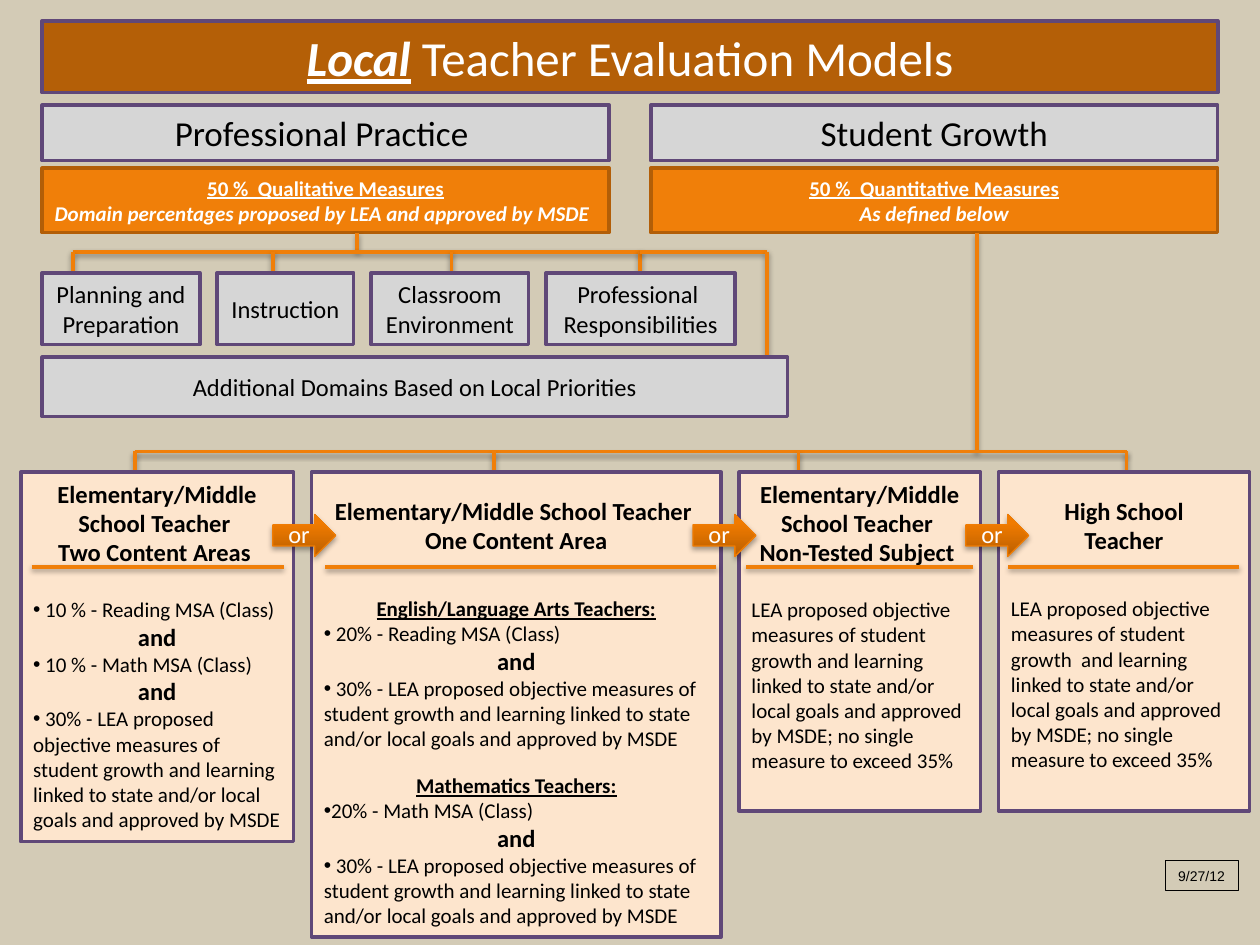
from lxml import etree
from pptx import Presentation
from pptx.dml.color import RGBColor
from pptx.enum.shapes import MSO_CONNECTOR, MSO_SHAPE
from pptx.enum.text import MSO_ANCHOR, MSO_AUTO_SIZE, PP_ALIGN
from pptx.oxml import parse_xml
from pptx.oxml.ns import qn
from pptx.util import Cm, Pt

DRAWING_NS = 'xmlns:a="http://schemas.openxmlformats.org/drawingml/2006/main"'
PURPLE, ORANGE, GREY, PEACH = "604878", "F07F09", "D6D6D6", "FDE5CD"
MARGIN, HALF_WIDTH = 0.85, 11.43
OBJECTIVES = ("LEA proposed objective measures of student growth and learning "
              "linked to state and/or local goals and approved by MSDE")


def color(hex_string):
    return RGBColor.from_string(hex_string)


def add_text(frame, text, size=14, ink="000000", bold=False, italic=False,
             underline=False, align=PP_ALIGN.CENTER, font="Calibri", before=0,
             bullet=False, same_line=False):
    paragraph = frame.paragraphs[-1]
    if paragraph.runs and not same_line:
        paragraph = frame.add_paragraph()
    paragraph.alignment = align
    paragraph.space_before = Pt(before)
    if bullet:
        properties = paragraph._p.get_or_add_pPr()
        properties.set("marL", "0")
        properties.set("indent", "0")
        etree.SubElement(properties, qn("a:buFont")).set("typeface", "Arial")
        etree.SubElement(properties, qn("a:buChar")).set("char", "•")
    run = paragraph.add_run()
    run.text = text
    run.font.name, run.font.size = font, Pt(size)
    run.font.bold, run.font.italic, run.font.underline = bold, italic, underline
    run.font.color.rgb = color(ink)


def style_box(shape, fill, line, width=2):
    if fill:
        shape.fill.solid()
        shape.fill.fore_color.rgb = color(fill)
    else:
        shape.fill.background()
    shape.line.color.rgb = color(line)
    shape.line.width = Pt(width)
    frame = shape.text_frame
    frame.word_wrap = True
    frame.auto_size = MSO_AUTO_SIZE.NONE
    frame.vertical_anchor = MSO_ANCHOR.MIDDLE
    frame.margin_left = frame.margin_right = Cm(0.25)
    frame.margin_top = frame.margin_bottom = Cm(0.13)
    return frame


def add_box(slide, left, top, width, height, fill=GREY, line=PURPLE, line_width=2):
    """Add a rectangle and return its text frame."""
    shape = slide.shapes.add_shape(MSO_SHAPE.RECTANGLE, Cm(left), Cm(top),
                                   Cm(width), Cm(height))
    shape.shadow.inherit = False
    return style_box(shape, fill, line, line_width)


def add_shadow(shape, blur, distance, alpha):
    """Give blur and distance in points and alpha in percent."""
    shape._element.spPr.append(parse_xml(
        f'<a:effectLst {DRAWING_NS}><a:outerShdw blurRad="{Pt(blur)}" '
        f'dist="{Pt(distance)}" dir="5400000" rotWithShape="0">'
        f'<a:srgbClr val="000000"><a:alpha val="{alpha * 1000}"/></a:srgbClr>'
        '</a:outerShdw></a:effectLst>'))


def add_line(slide, x1, y1, x2, y2):
    connector = slide.shapes.add_connector(MSO_CONNECTOR.STRAIGHT, Cm(x1), Cm(y1),
                                           Cm(x2), Cm(y2))
    connector.line.color.rgb = color(ORANGE)
    connector.line.width = Pt(2)
    add_shadow(connector, 3.1, 1.6, 38)


def add_branches(slide, trunk, trunk_top, bus, bottom, branches):
    """Connect a trunk to a horizontal bus with branches down to the boxes."""
    add_line(slide, trunk, trunk_top, trunk, bus)
    add_line(slide, branches[0], bus, branches[-1], bus)
    for branch in branches:
        add_line(slide, branch, bus, branch, bottom)


def add_title(slide, left, top, width, height):
    title = slide.shapes.title
    title.left, title.top = Cm(left), Cm(top)
    title.width, title.height = Cm(width), Cm(height)
    frame = style_box(title, "B45F07", PURPLE)
    add_text(frame, "Local", 28, "FFFFFF", bold=True, italic=True, underline=True)
    add_text(frame, " Teacher Evaluation Models", 28, "FFFFFF", same_line=True)


def add_component(slide, left, top, width, heading, share, basis, basis_align):
    """Add one half of the evaluation: its heading above its share."""
    add_text(add_box(slide, left, top, width, 1.12), heading, 20)
    frame = add_box(slide, left, top + 1.27, width, 1.3, ORANGE, "B25E07")
    add_text(frame, share, 12, "FFFFFF", bold=True, underline=True)
    add_text(frame, basis, 12, "FFFFFF", bold=True, italic=True, align=basis_align)


def add_domains(slide, left, top):
    add_branches(slide, 7.2, top - 0.81, top - 0.42, top, [1.47, 5.5, 9.1, 12.9])
    add_line(slide, 12.9, top - 0.42, 15.46, top - 0.42)
    add_line(slide, 15.46, top - 0.42, 15.46, top + 1.7)
    domain_left = left
    for width, lines in [(3.18, ["Planning and", "Preparation"]),
                         (2.75, ["Instruction"]),
                         (3.18, ["Classroom Environment"]),
                         (3.81, ["Professional ", "Responsibilities"])]:
        frame = add_box(slide, domain_left, top, width, 1.45)
        for line in lines:
            add_text(frame, line)
        domain_left += width + 0.35
    additional = add_box(slide, left, top + 1.7, 15.03, 1.2)
    add_text(additional, "Additional Domains Based on Local Priorities")


def add_measures(frame, measures, before=0):
    """List bulleted measures joined by a centred 'and'."""
    for index, measure in enumerate(measures):
        if index:
            add_text(frame, "and", bold=True)
        add_text(frame, measure, 12, align=PP_ALIGN.LEFT, bullet=True,
                 before=0 if index else before)


def add_teacher_column(slide, left, top, width, height, heading, rule, short):
    """Add a column with its heading; a short heading sits lower."""
    frame = add_box(slide, left, top, width, height, PEACH)
    frame.vertical_anchor = MSO_ANCHOR.TOP
    if short:
        frame.margin_top = Cm(0.47)
    for line in heading:
        add_text(frame, line, bold=True)
    add_line(slide, left + rule[0], top + 1.91, left + width - rule[1], top + 1.91)
    return frame


def add_teacher_columns(slide, left, top):
    add_branches(slide, 19.69, 4.69, top - 0.42, top, [2.72, 9.96, 16.1, 22.71])
    teacher = "Elementary/Middle School Teacher "
    columns = [(5.5, 7.45, [teacher, "Two Content Areas "], (0.22, 0.2), False),
               (8.26, 9.37, [teacher, "One Content Area"], (0.28, 0.11), True),
               (4.87, 6.83, [teacher, "Non-Tested Subject "], (0.14, 0.16), False),
               (5.06, 6.83, ["High School", "Teacher"], (0.2, 0.21), True)]
    frames = []
    for width, height, heading, rule, short in columns:
        frames.append(add_teacher_column(slide, left, top, width, height,
                                         heading, rule, short))
        left += width + 0.36
    two_areas, one_area, non_tested, high_school = frames

    add_measures(two_areas, [" 10 % - Reading MSA (Class)", " 10 % - Math MSA (Class)",
                             " 30% - " + OBJECTIVES], before=17)
    for subject, test, before in [("English/Language Arts", " 20% - Reading", 23.6),
                                  ("Mathematics", "20% - Math", 12.2)]:
        add_text(one_area, f"{subject} Teachers:", 12, bold=True, underline=True,
                 before=before)
        add_measures(one_area, [f"{test} MSA (Class)", " 30% - " + OBJECTIVES])
    limit = OBJECTIVES + "; no single measure to exceed 35%"
    add_text(non_tested, limit, 12, align=PP_ALIGN.LEFT, before=17)
    add_text(high_school, limit.replace("growth and", "growth  and"), 12,
             align=PP_ALIGN.LEFT, before=23.6)
    for arrow_left in (5.5, 13.97, 19.47):
        add_or_arrow(slide, arrow_left, top + 0.85)


def add_or_arrow(slide, left, top):
    arrow = slide.shapes.add_shape(MSO_SHAPE.RIGHT_ARROW, Cm(left), Cm(top),
                                   Cm(1.27), Cm(0.85))
    frame = style_box(arrow, None, "F07C03", 0.75)
    stops = "".join(f'<a:gs pos="{place * 1000}"><a:srgbClr val="{shade}"/></a:gs>'
                    for place, shade in [(0, "BA5F00"), (80, "F17B00"), (100, "F27C00")])
    properties = arrow._element.spPr
    properties.replace(properties.find(qn("a:noFill")), parse_xml(
        f'<a:gradFill {DRAWING_NS} rotWithShape="1"><a:gsLst>{stops}</a:gsLst>'
        '<a:lin ang="16200000" scaled="0"/></a:gradFill>'))
    add_shadow(arrow, 3.1, 1.8, 35)
    frame.margin_top, frame.margin_bottom = 0, Cm(0.05)
    add_text(frame, "or", ink="FFFFFF")


def add_date(slide, left, top):
    frame = add_box(slide, left, top, 1.47, 0.6, None, "000000", 0.75)
    frame.word_wrap = False
    add_text(frame, "9/27/12", 8, font="Arial", align=PP_ALIGN.LEFT)


def main():
    deck = Presentation()
    deck.slide_width, deck.slide_height = Cm(25.4), Cm(19.05)
    slide = deck.slides.add_slide(deck.slide_layouts[5])
    slide.background.fill.solid()
    slide.background.fill.fore_color.rgb = color("D3CBB6")
    add_title(slide, MARGIN, 0.42, 23.7, 1.45)
    add_component(slide, MARGIN, 2.12, HALF_WIDTH, "Professional Practice ",
                  "50 %  Qualitative Measures",
                  "Domain percentages proposed by LEA and approved by MSDE", PP_ALIGN.LEFT)
    add_component(slide, 13.12, 2.12, HALF_WIDTH, "Student Growth",
                  "50 %  Quantitative Measures", "As defined below", PP_ALIGN.CENTER)
    add_domains(slide, MARGIN, 5.5)
    add_teacher_columns(slide, 0.42, 9.52)
    add_date(slide, 23.5, 17.35)
    deck.save("out.pptx")


if __name__ == "__main__":
    main()
